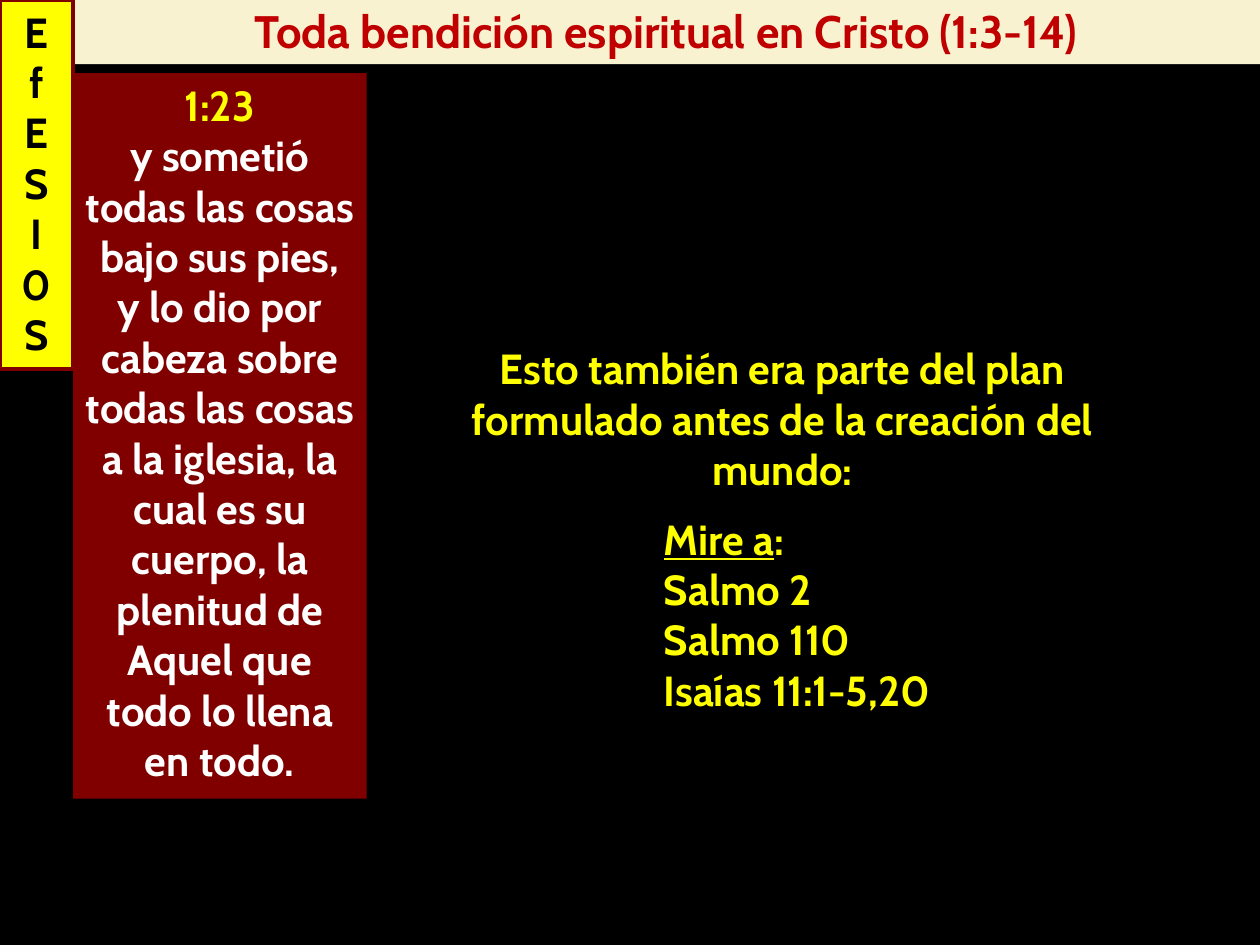
from pptx import Presentation
from pptx.dml.color import RGBColor
from pptx.enum.shapes import MSO_SHAPE
from pptx.enum.text import MSO_ANCHOR, MSO_AUTO_SIZE, PP_ALIGN
from pptx.util import Inches, Pt

YELLOW, MAROON, BLACK, WHITE = "FFFF00", "800000", "000000", "FFFFFF"
CREAM, RED = "F8F2D0", "C00000"


def color(value):
    return RGBColor.from_string(value)


def prepare_frame(shape, anchor=MSO_ANCHOR.TOP):
    frame = shape.text_frame
    frame.word_wrap = True
    frame.auto_size = MSO_AUTO_SIZE.SHAPE_TO_FIT_TEXT
    frame.vertical_anchor = anchor
    return frame


def add_panel(page, left, top, width, height, fill, line=None, anchor=MSO_ANCHOR.TOP):
    panel = page.shapes.add_shape(
        MSO_SHAPE.RECTANGLE, Inches(left), Inches(top), Inches(width), Inches(height))
    panel.shadow.inherit = False
    panel.fill.solid()
    panel.fill.fore_color.rgb = color(fill)
    if line:
        panel.line.color.rgb = color(line)
        panel.line.width = Pt(2.25)
    else:
        panel.line.fill.background()
    return prepare_frame(panel, anchor)


def add_text_box(page, left, top, width, height):
    box = page.shapes.add_textbox(Inches(left), Inches(top), Inches(width), Inches(height))
    return prepare_frame(box)


def add_span(para, text, ink, size=24, underline=None):
    span = para.add_run()
    span.text = text
    span.font.name = "Cabin"
    span.font.size = Pt(size)
    span.font.bold = True
    span.font.underline = underline
    span.font.color.rgb = color(ink)


def add_para(frame, text, ink, size=24, align=PP_ALIGN.CENTER, indent=0,
             before=0, spacing=None, underlined=""):
    first = frame.paragraphs[0]
    para = frame.add_paragraph() if first.runs else first
    para.alignment = align
    para.space_before = Pt(before)
    if spacing:
        para.line_spacing = spacing
    if indent:
        para._p.get_or_add_pPr().set("marL", str(Inches(indent)))
    if underlined:
        add_span(para, underlined, ink, size, underline=True)
    add_span(para, text, ink, size)


def main():
    deck = Presentation()
    deck.slide_width, deck.slide_height = Inches(10), Inches(7.5)
    page = deck.slides.add_slide(deck.slide_layouts[6])
    page.background.fill.solid()
    page.background.fill.fore_color.rgb = color(BLACK)

    comment = add_text_box(page, 3.17, 2.67, 6.08, 2.68)
    add_para(comment, "Esto también era parte del plan formulado antes de la creación del mundo:", YELLOW)
    references = {"align": PP_ALIGN.LEFT, "indent": 2}
    add_para(comment, ":", YELLOW, underlined="Mire a", before=11, **references)
    for passage in ("Salmo 2", "Salmo 110", "Isaías 11:1-5,20"):
        add_para(comment, passage, YELLOW, **references)

    verse = add_panel(page, 0.58, 0.58, 2.33, 5.76, MAROON)
    add_para(verse, "1:23", YELLOW)
    add_para(verse, "y sometió todas las cosas bajo sus pies, y lo dio por cabeza sobre todas "
                    "las cosas a la iglesia, la cual es su cuerpo, la plenitud de Aquel que "
                    "todo lo llena en todo.", WHITE)

    title = add_panel(page, 0.58, -0.05, 9.42, 0.56, CREAM, anchor=MSO_ANCHOR.MIDDLE)
    add_para(title, "Toda bendición espiritual en Cristo (1:3-14)", RED, size=26, spacing=1.05)

    book = add_panel(page, 0, 0, 0.58, 2.93, YELLOW, line=MAROON)
    for letter in "EfESI0S":
        add_para(book, letter, BLACK)

    deck.save("out.pptx")


if __name__ == "__main__":
    main()
